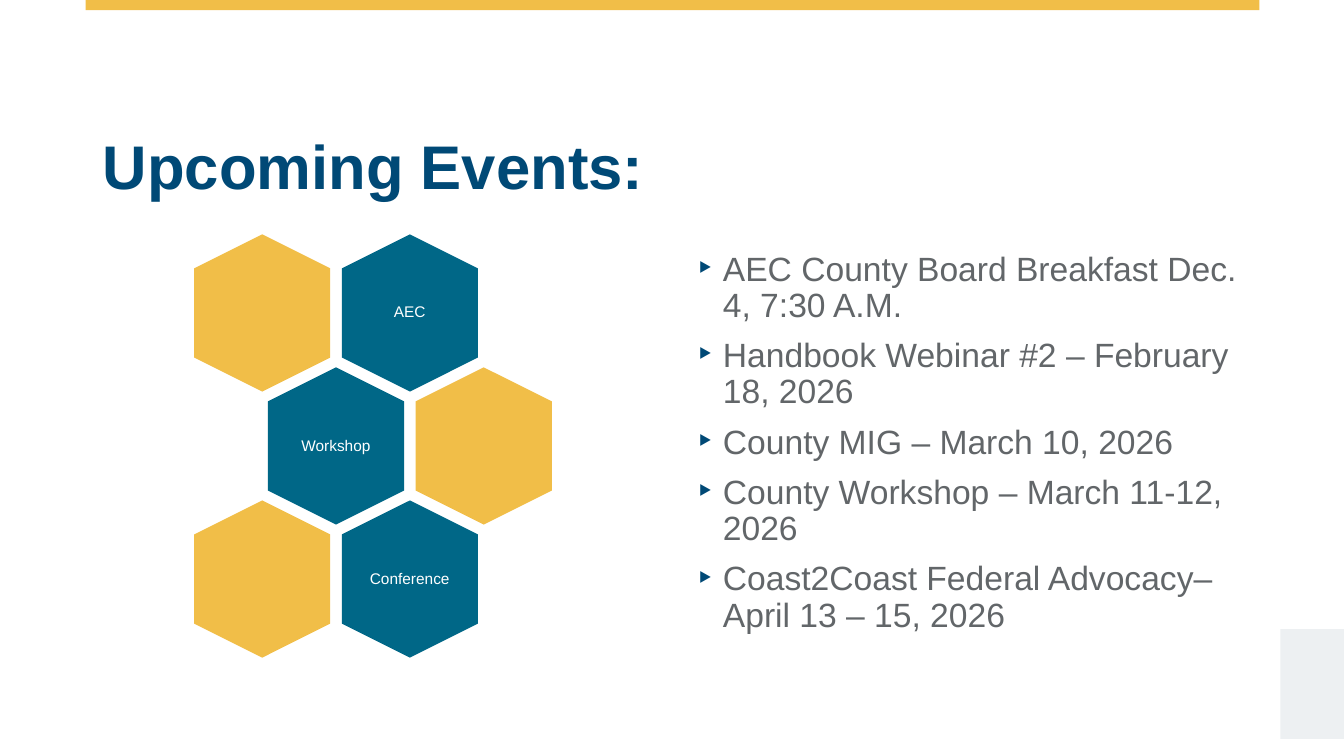
from lxml import etree
from pptx import Presentation
from pptx.dml.color import RGBColor
from pptx.enum.shapes import MSO_SHAPE as SHAPE
from pptx.enum.text import MSO_ANCHOR as ANCHOR, MSO_AUTO_SIZE as FIT, PP_ALIGN as ALIGN
from pptx.oxml.ns import qn
from pptx.util import Inches, Pt

TITLE = "Upcoming Events:"
EVENTS = [
    "AEC County Board Breakfast Dec. 4, 7:30 A.M.",
    "Handbook Webinar #2 – February 18, 2026",
    "County MIG – March 10, 2026",
    "County Workshop – March 11-12, 2026",
    "Coast2Coast Federal Advocacy– April 13 – 15, 2026",
]
HONEYCOMB = [("", "AEC"), ("Workshop", ""), ("", "Conference")]

NAVY = RGBColor(0x00, 0x49, 0x76)
TEAL = RGBColor(0x00, 0x67, 0x87)
GOLD = RGBColor(0xF1, 0xBE, 0x48)
PALE = RGBColor(0xED, 0xF0, 0xF2)
GRAY = RGBColor(0x62, 0x66, 0x69)
WHITE = RGBColor(0xFF, 0xFF, 0xFF)

HEX_W, HEX_H = 1.56, 1.35
HEX_LEFT, HEX_TOP = 1.82, 2.43
COL_STEP, ROW_STEP = 1.465, 1.32
LABEL_W, LABEL_H = 0.93, 1.07


def place(shape, left, top, width, height):
    shape.left, shape.top = Inches(left), Inches(top)
    shape.width, shape.height = Inches(width), Inches(height)


def set_frame(tf, anchor, insets):
    tf.word_wrap = True
    tf.auto_size = FIT.NONE
    tf.vertical_anchor = anchor
    tf.margin_left, tf.margin_top, tf.margin_right, tf.margin_bottom = map(Inches, insets)


def add_run(p, text, size, color, bold=False):
    r = p.add_run()
    r.text = text
    r.font.name = "Arial"
    r.font.size = Pt(size)
    r.font.bold = bold
    r.font.color.rgb = color


def add_filled(s, kind, box, color):
    shape = s.shapes.add_shape(kind, *map(Inches, box))
    shape.shadow.inherit = False
    shape.fill.solid()
    shape.fill.fore_color.rgb = color
    shape.line.fill.background()
    return shape


def add_bullet(p):
    pPr = p._p.get_or_add_pPr()
    pPr.set("marL", str(Inches(0.25)))
    pPr.set("indent", str(Inches(-0.25)))
    color = etree.SubElement(pPr, qn("a:buClr"))
    etree.SubElement(color, qn("a:srgbClr"), val=str(NAVY))
    etree.SubElement(pPr, qn("a:buSzPct"), val="120000")
    etree.SubElement(pPr, qn("a:buFont"), typeface="Arial")
    etree.SubElement(pPr, qn("a:buChar"), char="‣")


def add_cell(s, row, col, label):
    left = HEX_LEFT + COL_STEP * (col + row % 2 / 2)
    top = HEX_TOP + ROW_STEP * row
    cell = add_filled(s, SHAPE.HEXAGON, (left, top, HEX_W, HEX_H), TEAL if label else GOLD)
    cell.adjustments[0] = 0.25
    cell.rotation = 90
    if label:
        box = (left + (HEX_W - LABEL_W) / 2, top + (HEX_H - LABEL_H) / 2, LABEL_W, LABEL_H)
        tf = s.shapes.add_textbox(*map(Inches, box)).text_frame
        set_frame(tf, ANCHOR.MIDDLE, [0.05] * 4)
        p = tf.paragraphs[0]
        p.alignment = ALIGN.CENTER
        p.line_spacing = 0.9
        add_run(p, label, 11, WHITE)


def main():
    """Build the upcoming events slide."""
    prs = Presentation()
    prs.slide_width, prs.slide_height = Inches(13.33), Inches(7.5)
    s = prs.slides.add_slide(prs.slide_layouts[1])
    title, body = s.placeholders

    add_filled(s, SHAPE.RECTANGLE, (0.85, 0, 11.64, 0.1), GOLD)
    add_filled(s, SHAPE.RECTANGLE, (12.7, 6.24, 0.63, 1.09), PALE)

    place(title, 0.92, 0.4, 11.5, 1.7)
    set_frame(title.text_frame, ANCHOR.BOTTOM, (0.1, 0, 0.1, 0.1))
    p = title.text_frame.paragraphs[0]
    p.alignment = ALIGN.LEFT
    p.line_spacing = 0.8
    add_run(p, TITLE, 44, NAVY, bold=True)

    for row, labels in enumerate(HONEYCOMB):
        for col, label in enumerate(labels):
            add_cell(s, row, col, label)

    place(body, 6.82, 2.1, 5.6, 4.66)
    tf = body.text_frame
    set_frame(tf, ANCHOR.TOP, (0.1, 0.4, 0.1, 0.1))
    for i, event in enumerate(EVENTS):
        p = tf.add_paragraph() if i else tf.paragraphs[0]
        add_bullet(p)
        p.line_spacing = 0.9
        p.space_before = Pt(10 if i else 0)
        add_run(p, event, 24, GRAY)

    prs.save("out.pptx")


if __name__ == "__main__":
    main()
